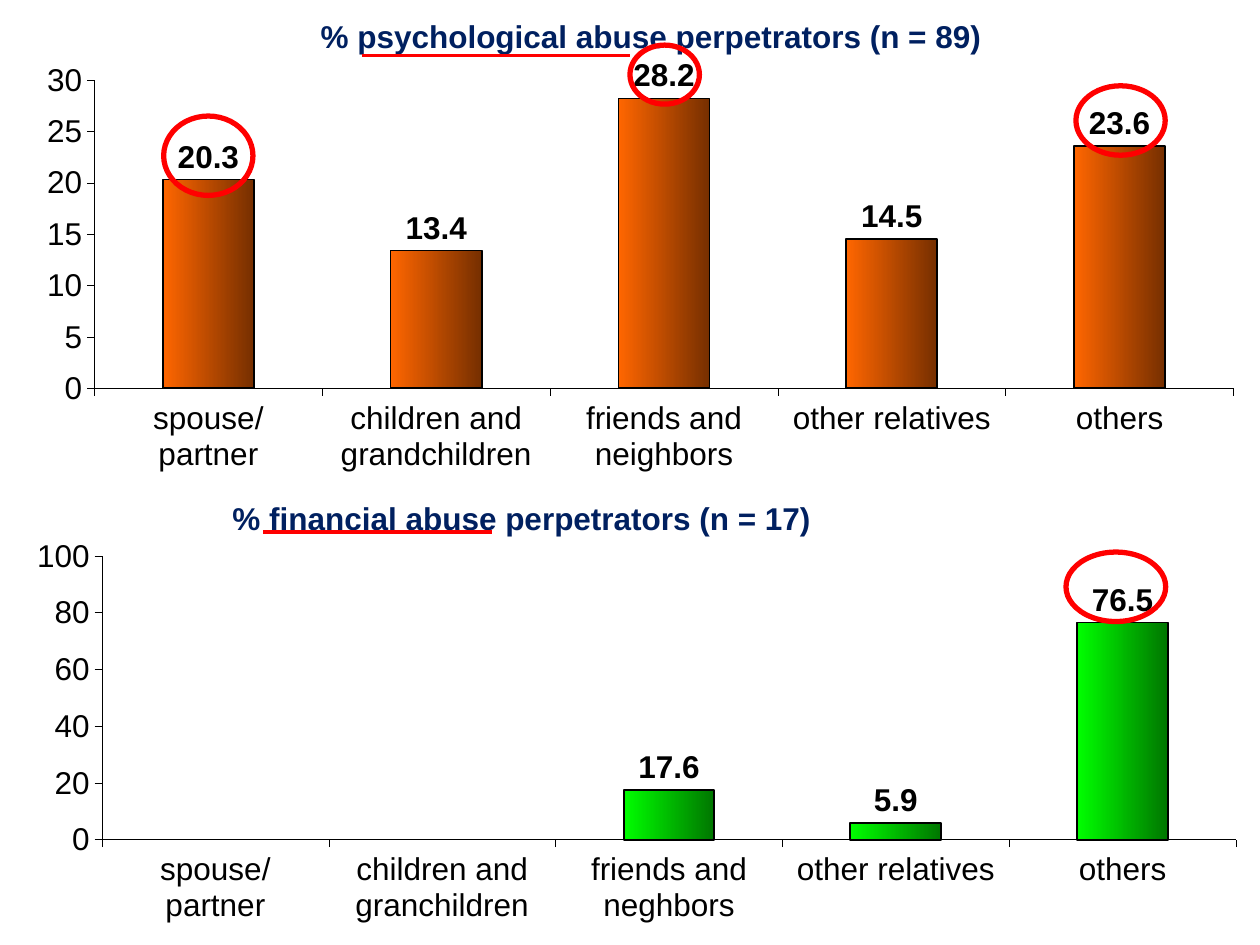
from lxml.etree import Element, SubElement
from pptx import Presentation
from pptx.chart.data import CategoryChartData as Data
from pptx.dml.color import RGBColor as Rgb
from pptx.enum.chart import XL_CHART_TYPE as Kind
from pptx.enum.chart import XL_LABEL_POSITION as Spot
from pptx.enum.chart import XL_TICK_MARK as Tick
from pptx.enum.shapes import MSO_CONNECTOR as Link
from pptx.enum.shapes import MSO_SHAPE as Form
from pptx.oxml.ns import qn
from pptx.util import Cm, Pt

HUES = {
    "ink": "000000",
    "navy": "002060",
    "red": "FF0000",
    "orange": "FF6600",
    "brown": "762F00",
    "lime": "00FF00",
    "green": "007600",
}
PLAIN = {"name": "Arial", "size": Pt(18), "bold": False}
BOLD = {**PLAIN, "bold": True}


def apply(item, form):
    for key, val in form.items():
        setattr(item, key, val)


class Page:
    def __init__(self, deck):
        self.shapes = deck.slides.add_slide(deck.slide_layouts[6]).shapes

    def hue(self, name):
        return Rgb.from_string(HUES[name])

    def font(self, font, form, name="ink"):
        apply(font, form)
        font.color.rgb = self.hue(name)

    def line(self, line, name, width):
        line.color.rgb = self.hue(name)
        line.width = Pt(width)

    def place(self, node, index, spots):
        for old in node.findall(qn("c:layout")):
            node.remove(old)
        layout = Element(qn("c:layout"))
        manual = SubElement(layout, qn("c:manualLayout"))
        for key, val in spots.items():
            SubElement(manual, qn(f"c:{key}")).set("val", str(val))
        node.insert(index, layout)

    def axis(self, axis):
        apply(axis, {
            "has_major_gridlines": False,
            "major_tick_mark": Tick.OUTSIDE,
            "minor_tick_mark": Tick.NONE,
        })
        self.font(axis.tick_labels.font, PLAIN)
        self.line(axis.format.line, "ink", 0.25)

    def chart(self, box, title, cats, vals, scale, hues, head, plot):
        data = Data(number_format="0.0")
        data.categories = cats
        data.add_series("Series 1", vals)
        chart = self.shapes.add_chart(
            Kind.COLUMN_CLUSTERED, *map(Cm, box), data).chart
        chart.has_legend = False
        self.font(chart.font, PLAIN)

        text = chart.chart_title.text_frame
        text.text = title
        self.font(text.paragraphs[0].runs[0].font, BOLD, "navy")
        edge = {"xMode": "edge", "yMode": "edge"}
        self.place(chart.chart_title._element, 1,
                   {**edge, **dict(zip("xy", head))})
        area = chart._chartSpace.chart.plotArea
        self.place(area, 0, {"layoutTarget": "inner", **edge,
                             **dict(zip("xywh", plot))})

        self.axis(chart.category_axis)
        self.axis(chart.value_axis)
        apply(chart.value_axis, scale)
        chart.value_axis.tick_labels.number_format = "0"
        chart.value_axis.tick_labels.number_format_is_linked = False

        bars = chart.plots[0]
        apply(bars, {"gap_width": 150, "vary_by_categories": False,
                     "has_data_labels": True})
        labels = bars.data_labels
        apply(labels, {"show_value": True, "number_format": "0.0",
                       "number_format_is_linked": False,
                       "position": Spot.OUTSIDE_END})
        self.font(labels.font, BOLD)
        look = bars.series[0].format
        look.fill.gradient()
        look.fill.gradient_angle = 0
        for stop, name in zip(look.fill.gradient_stops, hues):
            stop.color.rgb = self.hue(name)
        self.line(look.line, "ink", 1)

    def ring(self, *box):
        ring = self.shapes.add_shape(Form.OVAL, *map(Cm, box))
        ring.shadow.inherit = False
        ring.fill.background()
        self.line(ring.line, "red", 3)

    def rule(self, left, right, top):
        rule = self.shapes.add_connector(
            Link.STRAIGHT, Cm(left), Cm(top), Cm(right), Cm(top))
        SubElement(rule._element.spPr, qn("a:effectLst"))
        self.line(rule.line, "red", 2)


def main():
    deck = Presentation()
    apply(deck, {"slide_width": Cm(25.4), "slide_height": Cm(19.05)})
    page = Page(deck)
    page.chart(
        (0, 0, 25.4, 10.08),
        "% psychological abuse perpetrators (n = 89)",
        ["spouse/ partner", "children and grandchildren",
         "friends and neighbors", "other relatives", "others"],
        [20.3, 13.4, 28.2, 14.5, 23.6],
        {"minimum_scale": 0, "maximum_scale": 30, "major_unit": 5},
        ("orange", "brown"), (0.25, 0.02), (0.075, 0.16, 0.904, 0.617))
    page.chart(
        (0, 9.73, 25.4, 9.35),
        "% financial abuse perpetrators (n = 17)",
        ["spouse/ partner", "children and granchildren",
         "friends and neghbors", "other relatives", "others"],
        [None, None, 17.6, 5.9, 76.5],
        {"minimum_scale": 0, "maximum_scale": 100, "major_unit": 20},
        ("lime", "green"), (0.18, 0.02), (0.081, 0.158, 0.9, 0.612))
    for box in (
        (12.7, 0.91, 1.4, 1.19),
        (21.69, 1.73, 1.8, 1.4),
        (3.3, 2.34, 1.8, 1.6),
        (21.49, 11.13, 2.01, 1.4),
    ):
        page.ring(*box)
    page.rule(7.29, 12.7, 1.12)
    page.rule(5.31, 9.91, 10.72)
    deck.save("out.pptx")


if __name__ == "__main__":
    main()
